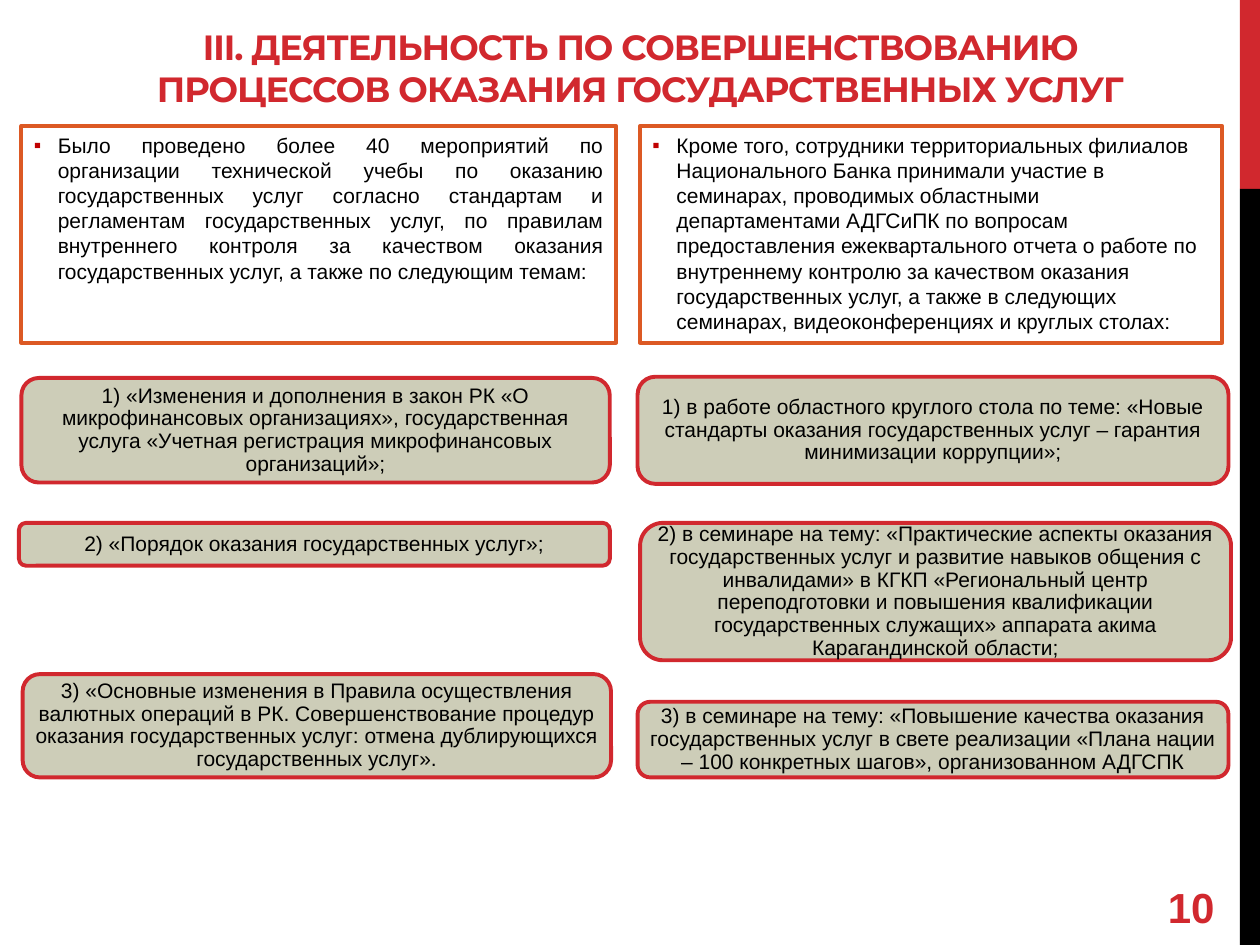
from lxml.etree import SubElement
from pptx import Presentation
from pptx.dml.color import RGBColor
from pptx.enum.shapes import MSO_SHAPE as Shape
from pptx.enum.text import MSO_ANCHOR as Anchor, MSO_AUTO_SIZE as Fit, PP_ALIGN as Align
from pptx.oxml.ns import qn
from pptx.util import Inches, Pt

WIDTH, HEIGHT = 10, 7.5
RED, ORANGE, SAND = "D1282E", "DC5924", "C8C8B1"
WHITE, BLACK, DARK_RED = "FFFFFF", "000000", "C00000"
TITLE = "III. ДЕЯТЕЛЬНОСТЬ ПО СОВЕРШЕНСТВОВАНИЮ ПРОЦЕССОВ ОКАЗАНИЯ ГОСУДАРСТВЕННЫХ УСЛУГ"

# left, width, alignment, text
INTROS = [
    (0.17, 4.72, Align.JUSTIFY,
     "Было проведено более 40 мероприятий по организации технической учебы по оказанию "
     "государственных услуг согласно стандартам и регламентам государственных услуг, "
     "по правилам внутреннего контроля за качеством оказания государственных услуг, "
     "а также по следующим темам:"),
    (5.08, 4.62, Align.LEFT,
     "Кроме того, сотрудники территориальных филиалов Национального Банка принимали участие "
     "в семинарах, проводимых областными департаментами АДГСиПК по вопросам предоставления "
     "ежеквартального отчета о работе по внутреннему контролю за качеством оказания "
     "государственных услуг, а также в следующих семинарах, видеоконференциях и круглых столах:"),
]

# left, top, width, height, text
CARDS = [
    (0.17, 3, 4.67, 0.83,
     "1) «Изменения и дополнения в закон РК «О микрофинансовых организациях», государственная "
     "услуга «Учетная регистрация микрофинансовых организаций»;"),
    (0.15, 4.15, 4.69, 0.34,
     "2) «Порядок оказания государственных услуг»;"),
    (0.18, 5.35, 4.67, 0.82,
     "3) «Основные изменения в Правила осуществления валютных операций в РК. Совершенствование "
     "процедур оказания государственных услуг: отмена дублирующихся государственных услуг»."),
    (5.06, 2.99, 4.69, 0.85,
     "1) в работе областного круглого стола по теме: «Новые стандарты оказания государственных "
     "услуг – гарантия минимизации коррупции»;"),
    (5.08, 4.15, 4.69, 1.09,
     "2) в семинаре на тему: «Практические аспекты оказания государственных услуг и развитие "
     "навыков общения с инвалидами» в КГКП «Региональный центр переподготовки и повышения "
     "квалификации государственных служащих» аппарата акима Карагандинской области;"),
    (5.06, 5.57, 4.69, 0.6,
     "3) в семинаре на тему: «Повышение качества оказания государственных услуг в свете "
     "реализации «Плана нации – 100 конкретных шагов», организованном АДГСПК"),
]


def rgb(code):
    return RGBColor.from_string(code)


def add_block(slide, kind, box, fill, line=None):
    block = slide.shapes.add_shape(kind, *map(Inches, box))
    block.shadow.inherit = False
    block.fill.solid()
    block.fill.fore_color.rgb = rgb(fill)
    if line:
        block.line.color.rgb = rgb(line)
        block.line.width = Pt(2.25)
    else:
        block.line.fill.background()
    return block


def write(shape, text, size, color, align, anchor, face="Arial", bold=False):
    frame = shape.text_frame
    frame.text = text
    frame.word_wrap = True
    frame.auto_size = Fit.NONE
    frame.vertical_anchor = anchor
    par = frame.paragraphs[0]
    par.alignment = align
    font = par.font
    font.name, font.size, font.bold = face, Pt(size), bold
    font.color.rgb = rgb(color)
    return par


def add_bullet(par, mark, color):
    props = par._p.get_or_add_pPr()
    indent = Inches(0.19)
    props.set("marL", str(indent))
    props.set("indent", str(-indent))
    tint = SubElement(props, qn("a:buClr"))
    SubElement(tint, qn("a:srgbClr"), val=color)
    SubElement(props, qn("a:buFont"), typeface="Arial")
    SubElement(props, qn("a:buChar"), char=mark)
    # The schema wants default run properties after the bullet.
    props.append(props.find(qn("a:defRPr")))


def add_title(slide):
    title = slide.shapes.title
    title.left, title.top, title.width, title.height = map(Inches, (0.58, 0.17, 9, 0.75))
    par = write(title, TITLE, 20, RED, Align.CENTER, Anchor.BOTTOM, "Montserrat", True)
    par.runs[0].font._element.set("spc", "-60")


def add_stripe(slide):
    left, split = 0.984 * WIDTH, HEIGHT / 5
    for top, bottom, color in ((0, split, RED), (split, HEIGHT, BLACK)):
        add_block(slide, Shape.RECTANGLE, (left, top, WIDTH - left, bottom - top), color)


def add_number(slide):
    box = slide.shapes.add_textbox(*map(Inches, (9.17, 7, 0.58, 0.4)))
    write(box, "10", 24, RED, Align.LEFT, Anchor.MIDDLE, bold=True)


def add_intro(slide, left, width, align, text):
    block = add_block(slide, Shape.RECTANGLE, (left, 1, width, 1.72), WHITE, ORANGE)
    par = write(block, text, 12, BLACK, align, Anchor.TOP)
    add_bullet(par, "▪", DARK_RED)


def add_card(slide, *box, text):
    card = add_block(slide, Shape.ROUNDED_RECTANGLE, box, SAND, RED)
    tint = card.fill._xPr.find(qn("a:solidFill"))[0]
    SubElement(tint, qn("a:alpha"), val="90000")
    frame = card.text_frame
    frame.margin_left = frame.margin_right = Inches(0.04)
    frame.margin_top = frame.margin_bottom = Inches(0.04)
    par = write(card, text, 12, BLACK, Align.CENTER, Anchor.MIDDLE)
    par.line_spacing = 0.9


def main():
    deck = Presentation()
    deck.slide_width, deck.slide_height = Inches(WIDTH), Inches(HEIGHT)
    slide = deck.slides.add_slide(deck.slide_layouts[5])
    add_stripe(slide)
    add_title(slide)
    add_number(slide)
    for intro in INTROS:
        add_intro(slide, *intro)
    for *box, text in CARDS:
        add_card(slide, *box, text=text)
    deck.save("out.pptx")


if __name__ == "__main__":
    main()
